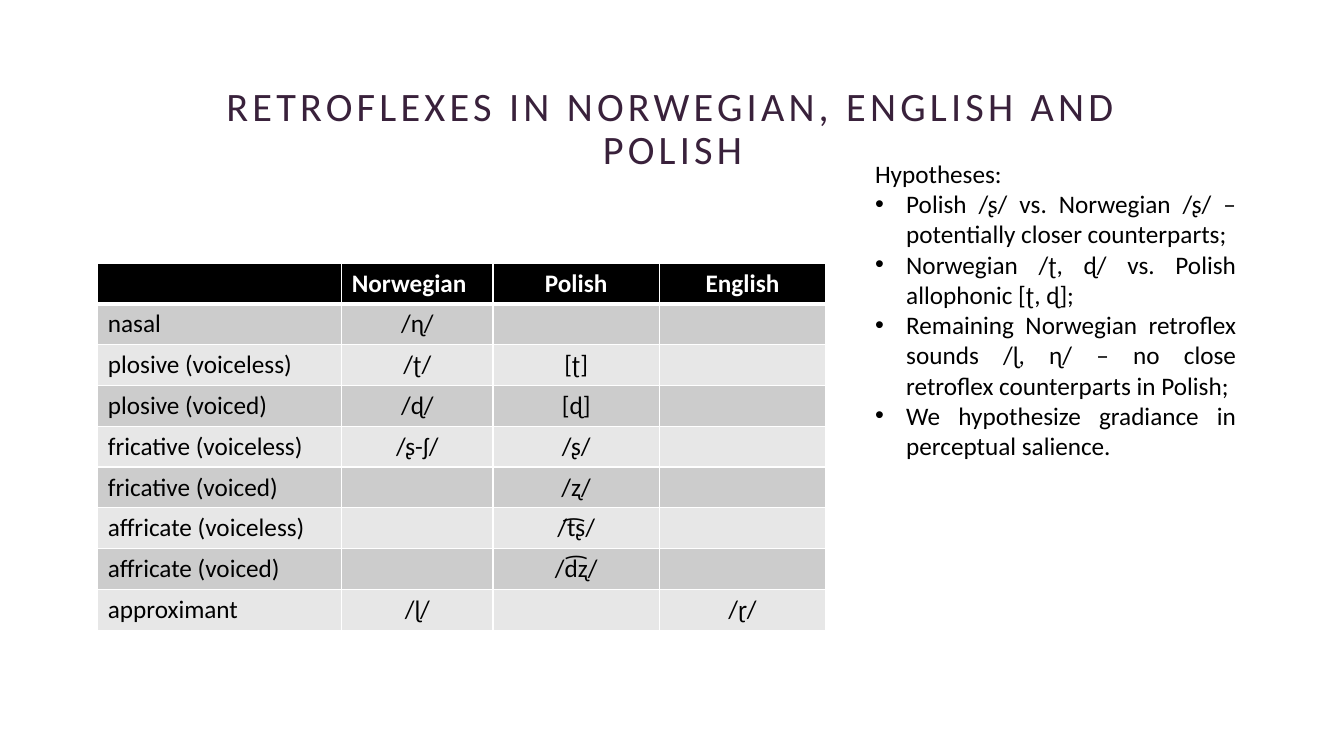
"""Build a slide comparing retroflex sounds in Norwegian, English and Polish."""
from dataclasses import dataclass

from lxml.etree import SubElement
from pptx import Presentation
from pptx.dml.color import RGBColor
from pptx.enum.text import MSO_ANCHOR as Anchor, PP_ALIGN as Align
from pptx.oxml.ns import qn
from pptx.slide import Slide
from pptx.table import _Cell as Cell
from pptx.text.text import _Paragraph as Paragraph
from pptx.util import Inches, Pt

BLACK = RGBColor(0x00, 0x00, 0x00)
WHITE = RGBColor(0xFF, 0xFF, 0xFF)
PLUM = RGBColor(0x39, 0x21, 0x3B)
DARK_BAND = RGBColor(0xCC, 0xCC, 0xCC)
LIGHT_BAND = RGBColor(0xE7, 0xE7, 0xE7)

BODY_FORMAT = {"name": "Calibri", "size": Pt(18), "bold": False}
HEADER_FORMAT = BODY_FORMAT | {"bold": True}
TITLE_FORMAT = BODY_FORMAT | {"size": Pt(28.8)}
TITLE_SPACING = 3
BULLET_INDENT = Inches(0.31)
COLUMN_WIDTHS = (2.42, 1.5, 1.65, 1.65)
ROW_HEIGHT = 0.405


@dataclass(frozen=True)
class Box:
    """Place on the slide in inches."""
    left: float
    top: float
    width: float
    height: float

    def lengths(self) -> list[Inches]:
        """Return the four values as lengths."""
        return [Inches(value) for value in (self.left, self.top, self.width, self.height)]


@dataclass(frozen=True)
class SoundRow:
    """One manner of articulation and its sound in each language."""
    manner: str
    norwegian: str = ""
    polish: str = ""
    english: str = ""

    def texts(self) -> tuple[str, ...]:
        """Return the cell texts from left to right."""
        return self.manner, self.norwegian, self.polish, self.english


TITLE_BOX = Box(1.48, 0.58, 10.38, 1.19)
TABLE_BOX = Box(0.97, 2.61, sum(COLUMN_WIDTHS), 3.65)
HYPOTHESES_BOX = Box(8.58, 1.52, 3.78, 3.43)

TITLE = "RETROFLEXES IN NORWEGIAN, ENGLISH AND POLISH"
SOUND_ROWS = (
    SoundRow("", "Norwegian", "Polish", "English"),
    SoundRow("nasal", "/ɳ/"),
    SoundRow("plosive (voiceless)", "/ʈ/", "[ʈ]"),
    SoundRow("plosive (voiced)", "/ɖ/", "[ɖ]"),
    SoundRow("fricative (voiceless)", "/ʂ-ʃ/", "/ʂ/"),
    SoundRow("fricative (voiced)", polish="/ʐ/"),
    SoundRow("affricate (voiceless)", polish="/t͡ʂ/"),
    SoundRow("affricate (voiced)", polish="/d͡ʐ/"),
    SoundRow("approximant", "/ɭ/", english="/ɽ/"),
)
HYPOTHESES = (
    "Polish /ʂ/ vs. Norwegian /ʂ/ – potentially closer counterparts;",
    "Norwegian /ʈ, ɖ/ vs. Polish allophonic [ʈ, ɖ];",
    "Remaining Norwegian retroflex sounds /ɭ, ɳ/ – no close retroflex counterparts in Polish;",
    "We hypothesize gradiance in perceptual salience.",
)


def write(paragraph: Paragraph, text: str, font_format: dict, color: RGBColor, align: Align) -> None:
    """Fill a paragraph with one formatted run."""
    paragraph.alignment = align
    run = paragraph.add_run()
    run.text = text
    for attribute, value in font_format.items():
        setattr(run.font, attribute, value)
    run.font.color.rgb = color


def add_bullet(paragraph: Paragraph) -> None:
    """Give a paragraph a hanging round bullet."""
    properties = paragraph._p.get_or_add_pPr()
    properties.set("marL", str(BULLET_INDENT))
    properties.set("indent", str(-BULLET_INDENT))
    SubElement(properties, qn("a:buFont"), typeface="Arial")
    SubElement(properties, qn("a:buChar"), char="•")


def add_borders(cell: Cell, bottom: float) -> None:
    """Draw white cell borders with the given bottom width in points."""
    properties = cell._tc.get_or_add_tcPr()
    for side, width in {"L": 1, "R": 1, "T": 1, "B": bottom}.items():
        line = SubElement(properties, qn(f"a:ln{side}"), w=str(Pt(width)))
        fill = SubElement(line, qn("a:solidFill"))
        SubElement(fill, qn("a:srgbClr"), val=str(WHITE))


def add_title(slide: Slide) -> None:
    """Add the widely spaced title."""
    frame = slide.shapes.add_textbox(*TITLE_BOX.lengths()).text_frame
    frame.word_wrap = True
    frame.vertical_anchor = Anchor.BOTTOM
    paragraph = frame.paragraphs[0]
    paragraph.line_spacing = 0.9
    write(paragraph, TITLE, TITLE_FORMAT, PLUM, Align.CENTER)
    paragraph.runs[0].font._element.set("spc", str(TITLE_SPACING * 100))


def add_sound_table(slide: Slide) -> None:
    """Add the banded table of retroflex sounds."""
    table = slide.shapes.add_table(len(SOUND_ROWS), len(COLUMN_WIDTHS), *TABLE_BOX.lengths()).table
    for column, width in zip(table.columns, COLUMN_WIDTHS):
        column.width = Inches(width)
    for row_index, (row, sounds) in enumerate(zip(table.rows, SOUND_ROWS)):
        row.height = Inches(ROW_HEIGHT)
        header = row_index == 0
        band = BLACK if header else DARK_BAND if row_index % 2 else LIGHT_BAND
        for column_index, (cell, text) in enumerate(zip(row.cells, sounds.texts())):
            add_borders(cell, 3 if header else 1)
            cell.fill.solid()
            cell.fill.fore_color.rgb = band
            left = column_index == 0 or (header and column_index == 1)
            if text:
                write(cell.text_frame.paragraphs[0], text, HEADER_FORMAT if header else BODY_FORMAT,
                      WHITE if header else BLACK, Align.LEFT if left else Align.CENTER)


def add_hypotheses(slide: Slide) -> None:
    """Add the justified list of hypotheses."""
    frame = slide.shapes.add_textbox(*HYPOTHESES_BOX.lengths()).text_frame
    frame.word_wrap = True
    write(frame.paragraphs[0], "Hypotheses:", BODY_FORMAT, BLACK, Align.JUSTIFY)
    for hypothesis in HYPOTHESES:
        paragraph = frame.add_paragraph()
        write(paragraph, hypothesis, BODY_FORMAT, BLACK, Align.JUSTIFY)
        add_bullet(paragraph)


def main() -> None:
    """Create and save the presentation."""
    presentation = Presentation()
    presentation.slide_width = Inches(13.33)
    presentation.slide_height = Inches(7.5)
    slide = presentation.slides.add_slide(presentation.slide_layouts[6])
    add_title(slide)
    add_sound_table(slide)
    add_hypotheses(slide)
    presentation.save("out.pptx")


if __name__ == "__main__":
    main()
